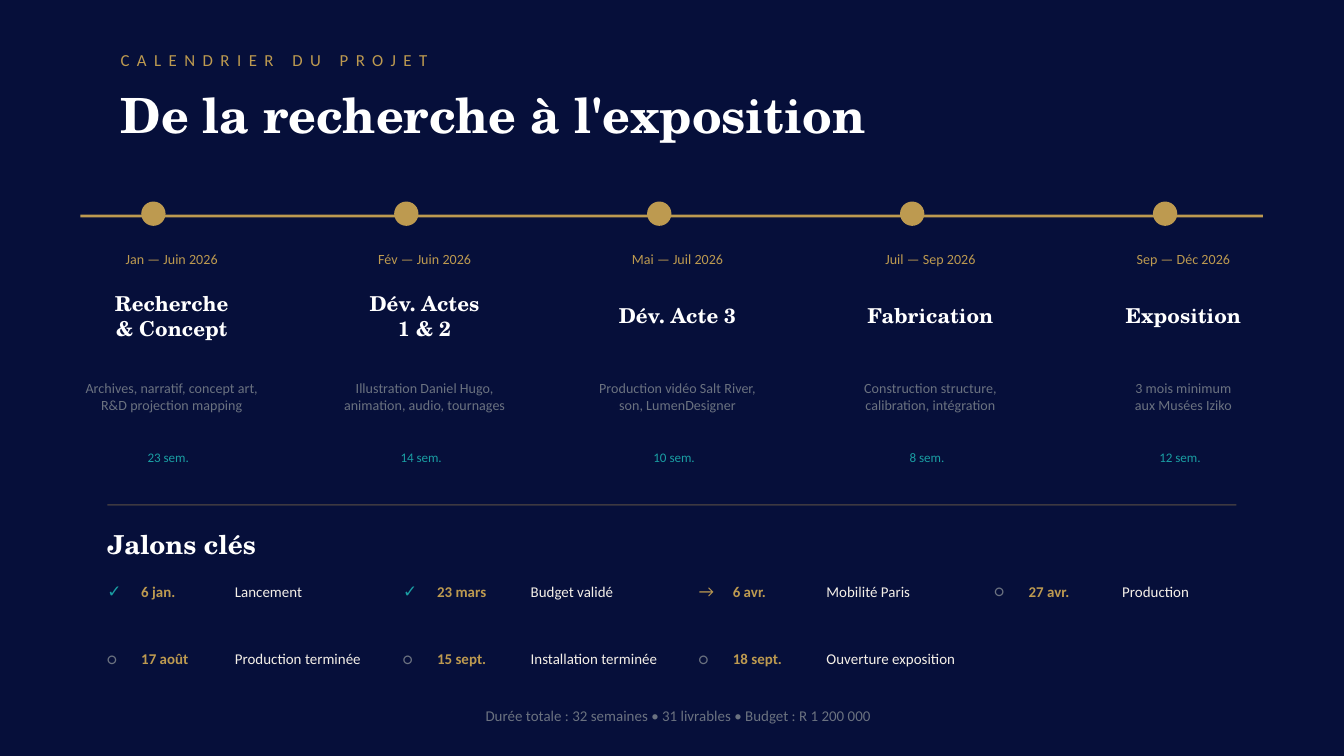
from dataclasses import dataclass

from lxml.etree import SubElement
from pptx import Presentation
from pptx.dml.color import RGBColor
from pptx.enum.shapes import MSO_SHAPE
from pptx.enum.text import MSO_ANCHOR, MSO_AUTO_SIZE, PP_ALIGN
from pptx.oxml.ns import qn
from pptx.util import Cm, Pt


@dataclass(frozen=True)
class TextStyle:
    size: float
    color: str
    font: str = "Calibri"
    bold: bool = False


@dataclass(frozen=True)
class Theme:
    navy: str = "060F3A"
    gold: str = "BD9A50"
    white: str = "FFFFFF"
    cream: str = "F5F0E8"
    gray: str = "6B7280"
    teal: str = "1A9EA3"
    serif: str = "TeX Gyre Schola"

    def heading(self, size):
        return TextStyle(size, self.white, self.serif, True)


THEME = Theme()
MARGIN = 2.03
INSET = 0.25

PHASES = [
    ("Jan — Juin 2026", ["Recherche", "& Concept"],
     ["Archives, narratif, concept art,", "R&D projection mapping"], "23 sem."),
    ("Fév — Juin 2026", ["Dév. Actes", "1 & 2"],
     ["Illustration Daniel Hugo,", "animation, audio, tournages"], "14 sem."),
    ("Mai — Juil 2026", ["Dév. Acte 3"],
     ["Production vidéo Salt River,", "son, LumenDesigner"], "10 sem."),
    ("Juil — Sep 2026", ["Fabrication"],
     ["Construction structure,", "calibration, intégration"], "8 sem."),
    ("Sep — Déc 2026", ["Exposition"],
     ["3 mois minimum", "aux Musées Iziko"], "12 sem."),
]
PHASE_LEFT, PHASE_STEP, PHASE_WIDTH = 1.02, 4.78, 4.45

MILESTONES = [
    ("✓", "6 jan.", "Lancement"),
    ("✓", "23 mars", "Budget validé"),
    ("→", "6 avr.", "Mobilité Paris"),
    ("○", "27 avr.", "Production"),
    ("○", "17 août", "Production terminée"),
    ("○", "15 sept.", "Installation terminée"),
    ("○", "18 sept.", "Ouverture exposition"),
]
STATUS_COLORS = {"✓": THEME.teal, "→": THEME.gold, "○": THEME.gray}
MILESTONE_COLUMNS, MILESTONE_STEP, MILESTONE_TOP, ROW_STEP = 4, 5.59, 10.92, 1.27


class SlideBuilder:
    def __init__(self, slide, theme):
        self.slide = slide
        self.theme = theme
        fill = slide.background.fill
        fill.solid()
        fill.fore_color.rgb = RGBColor.from_string(theme.navy)

    def fill_text(self, sp, lines, style, align, inset):
        tf = sp.text_frame
        tf.word_wrap = True
        tf.auto_size = MSO_AUTO_SIZE.NONE
        tf.vertical_anchor = MSO_ANCHOR.MIDDLE
        tf.margin_left = tf.margin_right = Cm(inset)
        tf.margin_top = tf.margin_bottom = Cm(inset / 2)
        tf.text = "\n".join(lines)
        for p in tf.paragraphs:
            p.alignment = align
            p.font.size = Pt(style.size)
            p.font.name = style.font
            p.font.bold = style.bold
            p.font.color.rgb = RGBColor.from_string(style.color)

    def title(self, x, y, w, h, text, style):
        sp = self.slide.shapes.title
        sp.left, sp.top, sp.width, sp.height = Cm(x), Cm(y), Cm(w), Cm(h)
        self.fill_text(sp, [text], style, PP_ALIGN.LEFT, INSET)

    def text(self, x, y, w, h, lines, style, align=PP_ALIGN.LEFT, inset=0, spacing=None):
        """Add a text box; spacing is the letter spacing in points."""
        sp = self.slide.shapes.add_textbox(Cm(x), Cm(y), Cm(w), Cm(h))
        self.fill_text(sp, lines, style, align, inset)
        if spacing:
            for p in sp.text_frame.paragraphs:
                for r in p.runs:
                    r._r.get_or_add_rPr().set("spc", str(spacing * 100))

    def shape(self, kind, x, y, w, h, color, alpha=None):
        """Add a filled shape without outline; alpha is its opacity in percent."""
        sp = self.slide.shapes.add_shape(kind, Cm(x), Cm(y), Cm(w), Cm(h))
        sp.shadow.inherit = False
        sp.line.fill.background()
        sp.fill.solid()
        sp.fill.fore_color.rgb = RGBColor.from_string(color)
        if alpha is not None:
            clr = sp._element.spPr.find(f"{qn('a:solidFill')}/{qn('a:srgbClr')}")
            SubElement(clr, qn("a:alpha")).set("val", str(alpha * 1000))

    def phase(self, x, dates, name, details, duration):
        t, center = self.theme, PP_ALIGN.CENTER
        self.shape(MSO_SHAPE.OVAL, x + 1.65, 3.81, 0.46, 0.46, t.gold)
        self.text(x, 4.57, PHASE_WIDTH, 0.64, [dates], TextStyle(7.5, t.gold), center)
        self.text(x, 5.33, PHASE_WIDTH, 1.27, name, t.heading(11), center)
        self.text(x, 6.73, PHASE_WIDTH, 1.52, details, TextStyle(7.5, t.gray), center)
        self.text(x + 0.89, 8.38, 2.54, 0.51, [duration], TextStyle(7, t.teal), center)

    def milestone(self, x, y, status, date, label):
        t = self.theme
        self.text(x, y, 0.51, 0.51, [status], TextStyle(9, STATUS_COLORS[status]))
        self.text(x + 0.64, y, 2.03, 0.51, [date], TextStyle(8, t.gold, bold=True))
        self.text(x + 2.41, y, 3.05, 0.51, [label], TextStyle(8, t.cream))


def main():
    prs = Presentation()
    prs.slide_width, prs.slide_height = Cm(25.4), Cm(14.29)
    s = SlideBuilder(prs.slides.add_slide(prs.slide_layouts[5]), THEME)

    s.text(MARGIN, 0.76, 12.7, 0.76, ["CALENDRIER DU PROJET"],
           TextStyle(9, THEME.gold), inset=INSET, spacing=4)
    s.title(MARGIN, 1.52, 22.86, 1.27, "De la recherche à l'exposition", THEME.heading(26))

    s.shape(MSO_SHAPE.RECTANGLE, 1.52, 4.06, 22.35, 0.05, THEME.gold)
    for i, phase in enumerate(PHASES):
        s.phase(PHASE_LEFT + i * PHASE_STEP, *phase)

    s.shape(MSO_SHAPE.RECTANGLE, MARGIN, 9.53, 21.34, 0.03, THEME.gold, alpha=30)
    s.text(MARGIN, 9.91, 7.62, 0.76, ["Jalons clés"], THEME.heading(14))
    for i, milestone in enumerate(MILESTONES):
        row, column = divmod(i, MILESTONE_COLUMNS)
        s.milestone(MARGIN + column * MILESTONE_STEP, MILESTONE_TOP + row * ROW_STEP, *milestone)

    s.text(MARGIN, 13.21, 21.59, 0.64,
           ["Durée totale : 32 semaines • 31 livrables • Budget : R 1 200 000"],
           TextStyle(8, THEME.gray), PP_ALIGN.CENTER, INSET)
    prs.save("out.pptx")


if __name__ == "__main__":
    main()
